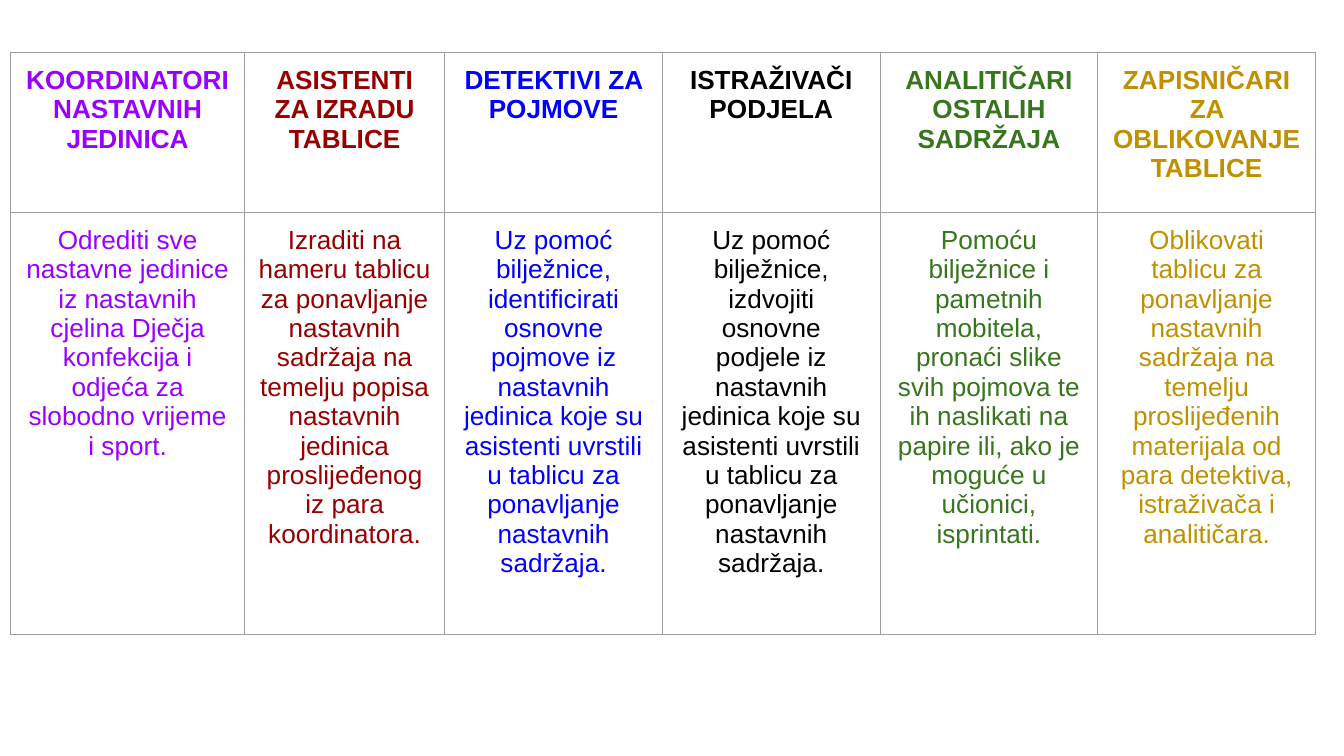
from lxml import etree
from pptx import Presentation
from pptx import util as u
from pptx.dml.color import RGBColor
from pptx.enum import text
from pptx.oxml.ns import qn

COLORS = {
    "purple": "9900FF",
    "red": "980000",
    "blue": "0000FF",
    "black": "000000",
    "green": "38761D",
    "gold": "BF9000",
    "border": "9E9E9E",
    "background": "FFFFFF",
}

# Each team: colour, column width, heading, task
TEAMS = [
    ("purple", 1.74, "KOORDINATORI NASTAVNIH JEDINICA",
     "Odrediti sve nastavne jedinice iz nastavnih cjelina Dječja konfekcija "
     "i odjeća za slobodno vrijeme i sport."),
    ("red", 1.49, "ASISTENTI ZA IZRADU TABLICE",
     "Izraditi na hameru tablicu za ponavljanje nastavnih sadržaja na temelju "
     "popisa nastavnih jedinica proslijeđenog iz para koordinatora."),
    ("blue", 1.62, "DETEKTIVI ZA POJMOVE",
     "Uz pomoć bilježnice, identificirati osnovne pojmove iz nastavnih jedinica "
     "koje su asistenti uvrstili u tablicu za ponavljanje nastavnih sadržaja."),
    ("black", 1.62, "ISTRAŽIVAČI PODJELA",
     "Uz pomoć bilježnice, izdvojiti osnovne podjele iz nastavnih jedinica "
     "koje su asistenti uvrstili u tablicu za ponavljanje nastavnih sadržaja."),
    ("green", 1.62, "ANALITIČARI OSTALIH SADRŽAJA",
     "Pomoću bilježnice i pametnih mobitela, pronaći slike svih pojmova te ih "
     "naslikati na papire ili, ako je moguće u učionici, isprintati."),
    ("gold", 1.62, "ZAPISNIČARI ZA OBLIKOVANJE TABLICE",
     "Oblikovati tablicu za ponavljanje nastavnih sadržaja na temelju "
     "proslijeđenih materijala od para detektiva, istraživača i analitičara."),
]
ROW_HEIGHTS = [1.19, 3.14]
MARGIN = u.Inches(0.1)


def add_borders(cell):
    properties = cell._tc.get_or_add_tcPr()
    for side in ("lnL", "lnR", "lnT", "lnB"):
        line = etree.SubElement(properties, qn(f"a:{side}"), w=str(u.Pt(0.75)))
        fill = etree.SubElement(line, qn("a:solidFill"))
        etree.SubElement(fill, qn("a:srgbClr"), val=COLORS["border"])


def fill_cell(cell, words, color, bold):
    add_borders(cell)
    cell.fill.background()
    cell.margin_left = cell.margin_right = MARGIN
    cell.margin_top = cell.margin_bottom = MARGIN
    cell.vertical_anchor = text.MSO_ANCHOR.TOP
    para = cell.text_frame.paragraphs[0]
    para.alignment = text.PP_ALIGN.CENTER
    span = para.add_run()
    span.text = words
    span.font.name = "Arial"
    span.font.size = u.Pt(14)
    span.font.bold = bold
    span.font.color.rgb = RGBColor.from_string(COLORS[color])


def add_team_table(page):
    width = sum(team[1] for team in TEAMS)
    frame = page.shapes.add_table(
        len(ROW_HEIGHTS), len(TEAMS), u.Inches(0.08), u.Inches(0.39),
        u.Inches(width), u.Inches(sum(ROW_HEIGHTS)))
    table = frame.table
    table.horz_banding = False
    table.first_row = False
    for row, height in zip(table.rows, ROW_HEIGHTS):
        row.height = u.Inches(height)
    for index, (color, column_width, heading, task) in enumerate(TEAMS):
        table.columns[index].width = u.Inches(column_width)
        fill_cell(table.cell(0, index), heading, color, True)
        fill_cell(table.cell(1, index), task, color, False)


def main():
    # Widescreen deck (16:9) and blank page
    deck = Presentation()
    deck.slide_width = u.Inches(10)
    deck.slide_height = u.Inches(10 * 9 / 16)
    page = deck.slides.add_slide(deck.slide_layouts[6])
    page.background.fill.solid()
    page.background.fill.fore_color.rgb = RGBColor.from_string(COLORS["background"])

    # Teams and their tasks
    add_team_table(page)
    deck.save("out.pptx")


if __name__ == "__main__":
    main()
